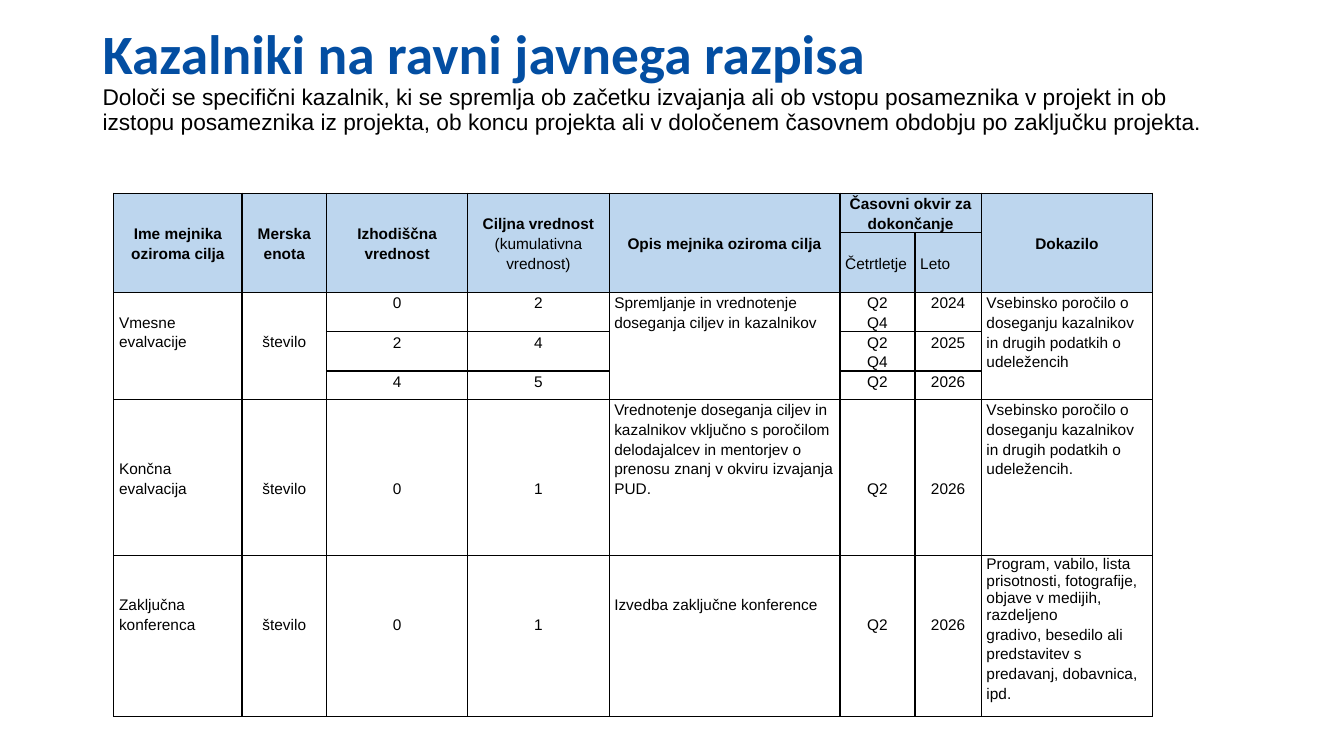
from dataclasses import dataclass

from lxml import etree
from pptx import Presentation
from pptx import util as u
from pptx.dml.color import RGBColor
from pptx.enum import text
from pptx.oxml import ns


@dataclass(frozen=True)
class Theme:
    blue: RGBColor = RGBColor(0x03, 0x4E, 0xA2)
    header: RGBColor = RGBColor(0xBD, 0xD6, 0xEE)
    black: RGBColor = RGBColor(0, 0, 0)
    heading_size: float = 39.6
    intro_size: float = 16.2
    table_size: float = 11


THEME = Theme()
LEFT, CENTER = text.PP_ALIGN.LEFT, text.PP_ALIGN.CENTER
LINE = 0.495  # height of one table line in cm


def style(run, font, size, color, bold):
    run.font.name = font
    run.font.size = u.Pt(size)
    run.font.color.rgb = color
    run.font.bold = bold


def add_borders(cell):
    properties = cell._tc.get_or_add_tcPr()
    for position, side in enumerate(("lnL", "lnR", "lnT", "lnB")):
        line = etree.Element(ns.qn(f"a:{side}"), w=str(u.Pt(1)))
        fill = etree.SubElement(line, ns.qn("a:solidFill"))
        etree.SubElement(fill, ns.qn("a:srgbClr"), val=str(THEME.black))
        properties.insert(position, line)


prs = Presentation()
prs.slide_width, prs.slide_height = u.Cm(33.87), u.Cm(19.05)
slide = prs.slides.add_slide(prs.slide_layouts[5])

# Heading and introduction
title = slide.shapes.title
title.left, title.top, title.width, title.height = u.Cm(2.33), u.Cm(0.66), u.Cm(29.21), u.Cm(3.68)
title_frame = title.text_frame
title_frame.text = (
    "Kazalniki na ravni javnega razpisa\n"
    "Določi se specifični kazalnik, ki se spremlja ob začetku izvajanja ali ob vstopu posameznika "
    "v projekt in ob izstopu posameznika iz projekta, ob koncu projekta ali v določenem časovnem "
    "obdobju po zaključku projekta."
)
title_frame.word_wrap = True
title_frame.auto_size = text.MSO_AUTO_SIZE.NONE
title_frame.vertical_anchor = text.MSO_ANCHOR.TOP
title_frame.margin_top = 0
heading, intro = title_frame.paragraphs
for paragraph in (heading, intro):
    paragraph.alignment = LEFT
    paragraph.line_spacing = 0.9
style(heading.runs[0], "Calibri", THEME.heading_size, THEME.blue, True)
style(intro.runs[0], "Arial", THEME.intro_size, THEME.black, False)

# Table contents; None marks a cell covered by a merged one
rows = [
    ["Ime mejnika oziroma cilja", "Merska enota", "Izhodiščna vrednost", "Ciljna vrednost ",
     "Opis mejnika oziroma cilja", "Časovni okvir za dokončanje", None, "Dokazilo"],
    [None, None, None, None, None, "Četrtletje", "Leto", None],
    ["Vmesne evalvacije", "število", "0", "2",
     "Spremljanje in vrednotenje doseganja ciljev in kazalnikov", "Q2\nQ4", "2024",
     "Vsebinsko poročilo o doseganju kazalnikov in drugih podatkih o udeležencih"],
    [None, None, "2", "4", None, "Q2\nQ4", "2025", None],
    [None, None, "4", "5", None, "Q2", "2026", None],
    ["Končna evalvacija", "število", "0", "1",
     "Vrednotenje doseganja ciljev in kazalnikov vključno s poročilom delodajalcev in mentorjev "
     "o prenosu znanj v okviru izvajanja PUD.", "Q2", "2026",
     "Vsebinsko poročilo o doseganju kazalnikov in drugih podatkih o udeležencih."],
    ["Zaključna konferenca", "število", "0", "1", "Izvedba zaključne konference", "Q2", "2026",
     "Program, vabilo, lista prisotnosti, fotografije, objave v medijih, razdeljeno\n"
     "gradivo, besedilo ali predstavitev s predavanj, dobavnica, ipd."],
]
# Number of lines by which the text of each body cell is lowered
lowered = {
    2: [1, 2, 0, 0, 0, 0, 0, 0],
    5: [3, 4, 4, 4, 0, 4, 4, 0],
    6: [2, 3, 3, 3, 2, 3, 3, 0],
}
left_columns = (0, 4, 7)
widths = [3.23, 2.13, 3.56, 3.56, 5.82, 1.89, 1.67, 4.32]
heights = [0.99, 1.5, 0.99, 0.99, 0.71, 3.93, 4.06]

# Table grid
table = slide.shapes.add_table(
    len(rows), len(widths), u.Cm(2.87), u.Cm(4.87), u.Cm(sum(widths)), u.Cm(sum(heights))
).table
table.horz_banding = False
for column, width in zip(table.columns, widths):
    column.width = u.Cm(width)
for row, height in zip(table.rows, heights):
    row.height = u.Cm(height)

# Merged cells
for c in (0, 1, 2, 3, 4, 7):
    table.cell(0, c).merge(table.cell(1, c))
for c in (0, 1, 4, 7):
    table.cell(2, c).merge(table.cell(4, c))
table.cell(0, 5).merge(table.cell(0, 6))

# Cell text, fills and borders
for r, row in enumerate(rows):
    for c, content in enumerate(row):
        cell = table.cell(r, c)
        is_header = r < 2
        if is_header:
            cell.fill.solid()
            cell.fill.fore_color.rgb = THEME.header
        else:
            cell.fill.background()
        add_borders(cell)
        cell.margin_left = cell.margin_right = u.Cm(0.13)
        cell.margin_bottom = 0
        cell.margin_top = u.Cm(lowered.get(r, [0] * len(row))[c] * LINE)
        cell.vertical_anchor = text.MSO_ANCHOR.MIDDLE if is_header else text.MSO_ANCHOR.TOP
        if content is None:
            continue
        cell.text_frame.text = content
        for paragraph in cell.text_frame.paragraphs:
            at_left = r == 1 or (r > 1 and c in left_columns)
            paragraph.alignment = LEFT if at_left else CENTER
            paragraph.line_spacing = 1.15
            style(paragraph.runs[0], "Arial", THEME.table_size, THEME.black, r == 0)

# Details of single cells
cumulative = table.cell(0, 3).text_frame.paragraphs[0].add_run()
cumulative.text = "(kumulativna vrednost)"
style(cumulative, "Arial", THEME.table_size, THEME.black, False)
table.cell(6, 7).text_frame.paragraphs[0].line_spacing = 1.0

prs.save("out.pptx")
